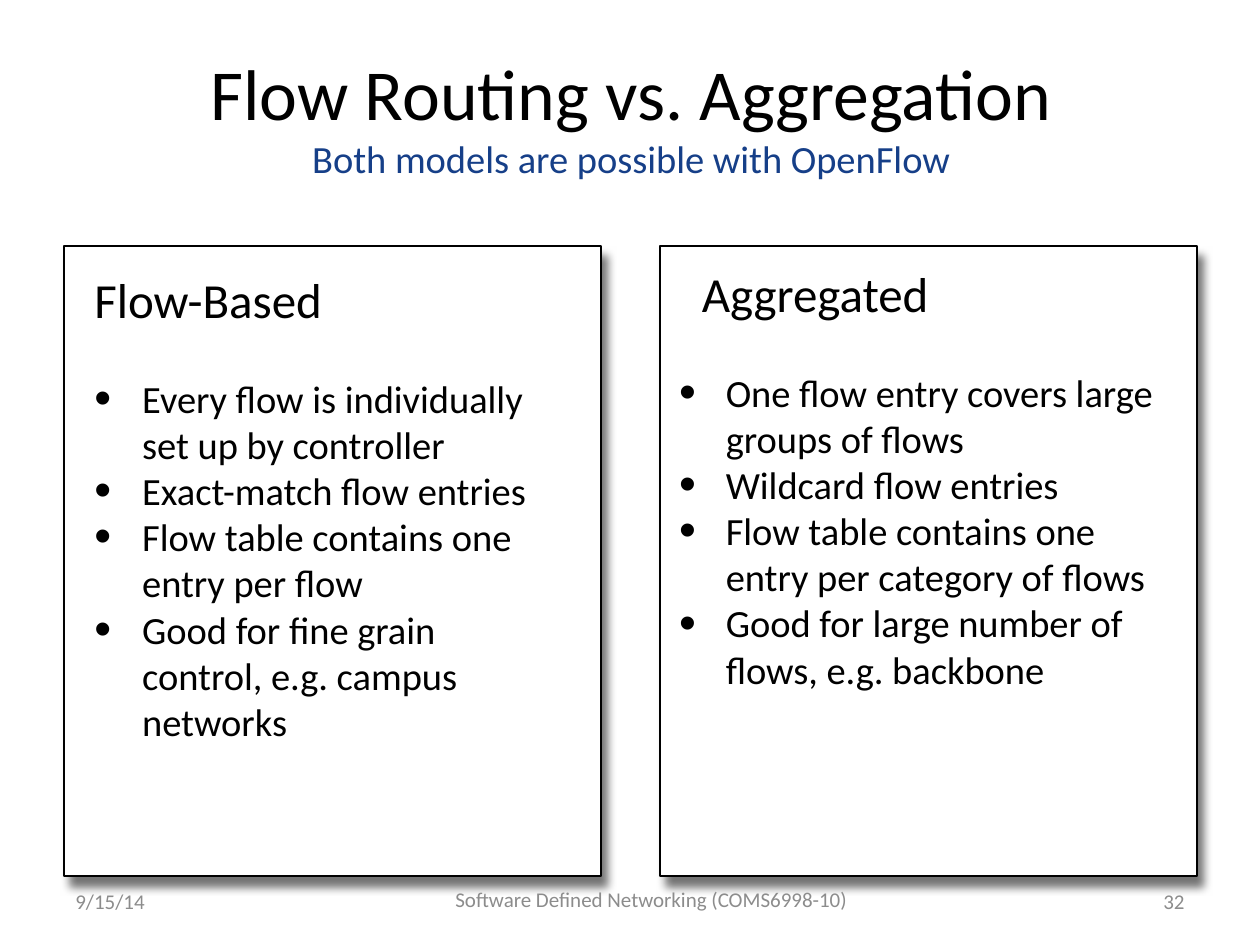
from lxml.etree import SubElement
from pptx import Presentation
from pptx.dml.color import RGBColor
from pptx.enum.shapes import MSO_SHAPE
from pptx.enum.text import MSO_ANCHOR, PP_ALIGN
from pptx.oxml.ns import qn
from pptx.util import Inches, Pt

COLORS = {"ink": "000000", "paper": "FFFFFF", "subtitle": "163F88", "footer": "8C8C8C"}

deck = Presentation()
deck.slide_width, deck.slide_height = Inches(10), Inches(7.5)
slide = deck.slides.add_slide(deck.slide_layouts[6])


def area(left, top, width, height):
    """Turn percentages of the slide into left, top, width and height."""
    return [
        int(left * deck.slide_width / 100),
        int(top * deck.slide_height / 100),
        int(width * deck.slide_width / 100),
        int(height * deck.slide_height / 100),
    ]


def write(frame, text, size=22, color="ink", align=PP_ALIGN.LEFT, after=0, indent=0, bullet=False):
    """Add a paragraph, filling the first one while it is still empty."""
    paragraph = frame.paragraphs[0] if not frame.text else frame.add_paragraph()
    paragraph.alignment = align
    paragraph.space_after = Pt(after)
    run = paragraph.add_run()
    run.text = text
    run.font.size = Pt(size)
    run.font.name = "Calibri"
    run.font.color.rgb = RGBColor.from_string(COLORS[color])
    properties = paragraph._p.get_or_add_pPr()
    properties.set("marL", str(Inches(indent)))
    if bullet:
        properties.set("indent", str(-Inches(indent)))
        SubElement(properties, qn("a:buSzPct"), val="125000")
        SubElement(properties, qn("a:buFont"), typeface="Arial")
        SubElement(properties, qn("a:buChar"), char="•")


# Title and subtitle
heading = slide.shapes.add_textbox(*area(7.4, 3.2, 85.4, 17.87)).text_frame
heading.word_wrap = True
heading.vertical_anchor = MSO_ANCHOR.MIDDLE
write(heading, "Flow Routing vs. Aggregation", size=41, align=PP_ALIGN.CENTER)
write(heading, "Both models are possible with OpenFlow", color="subtitle", align=PP_ALIGN.CENTER)

# Two models: panel left, text left, inset, model name, name indent, bullet indent, points
models = [
    (5.1, 6.5, (0.1, 0.05), "Flow-Based", 0, 0.38, [
        "Every flow is individually set up by controller",
        "Exact-match flow entries",
        "Flow table contains one entry per flow",
        "Good for fine grain control, e.g. campus networks",
    ]),
    (52.4, 53.9, (0, 0), "Aggregated", 0.18, 0.37, [
        "One flow entry covers large groups of flows",
        "Wildcard flow entries",
        "Flow table contains one entry per category of flows",
        "Good for large number of flows, e.g. backbone",
    ]),
]
for panel_left, text_left, (inset_x, inset_y), model, name_indent, point_indent, points in models:
    panel = slide.shapes.add_shape(MSO_SHAPE.RECTANGLE, *area(panel_left, 26, 42.6, 66.67))
    panel.fill.solid()
    panel.fill.fore_color.rgb = RGBColor.from_string(COLORS["paper"])
    panel.line.color.rgb = RGBColor.from_string(COLORS["ink"])
    panel.line.width = Pt(1)
    panel.shadow.inherit = False
    effects = panel._element.spPr.find(qn("a:effectLst"))
    shadow = SubElement(effects, qn("a:outerShdw"), blurRad=str(Pt(5)), dist=str(Pt(7)),
                        dir=str(60 * 60000), algn="tl", rotWithShape="0")
    shade = SubElement(shadow, qn("a:srgbClr"), val=COLORS["ink"])
    SubElement(shade, qn("a:alpha"), val="55000")

    description = slide.shapes.add_textbox(*area(text_left, 27.87, 39.2, 63.6)).text_frame
    description.word_wrap = True
    description.margin_left = description.margin_right = Inches(inset_x)
    description.margin_top = description.margin_bottom = Inches(inset_y)
    write(description, model, size=28, after=26.5, indent=name_indent)
    for point in points:
        write(description, point, indent=point_indent, bullet=True)

# Footer
for text, place, align in [
    ("9/15/14", (5, 92.67, 23.3, 5.33), PP_ALIGN.LEFT),
    ("32", (71.7, 92.67, 23.3, 5.33), PP_ALIGN.RIGHT),
    ("Software Defined Networking (COMS6998-10)", (34.2, 92.27, 35, 5.73), PP_ALIGN.CENTER),
]:
    footer = slide.shapes.add_textbox(*area(*place)).text_frame
    footer.word_wrap = True
    footer.vertical_anchor = MSO_ANCHOR.MIDDLE
    write(footer, text, size=12, color="footer", align=align)

deck.save("out.pptx")
